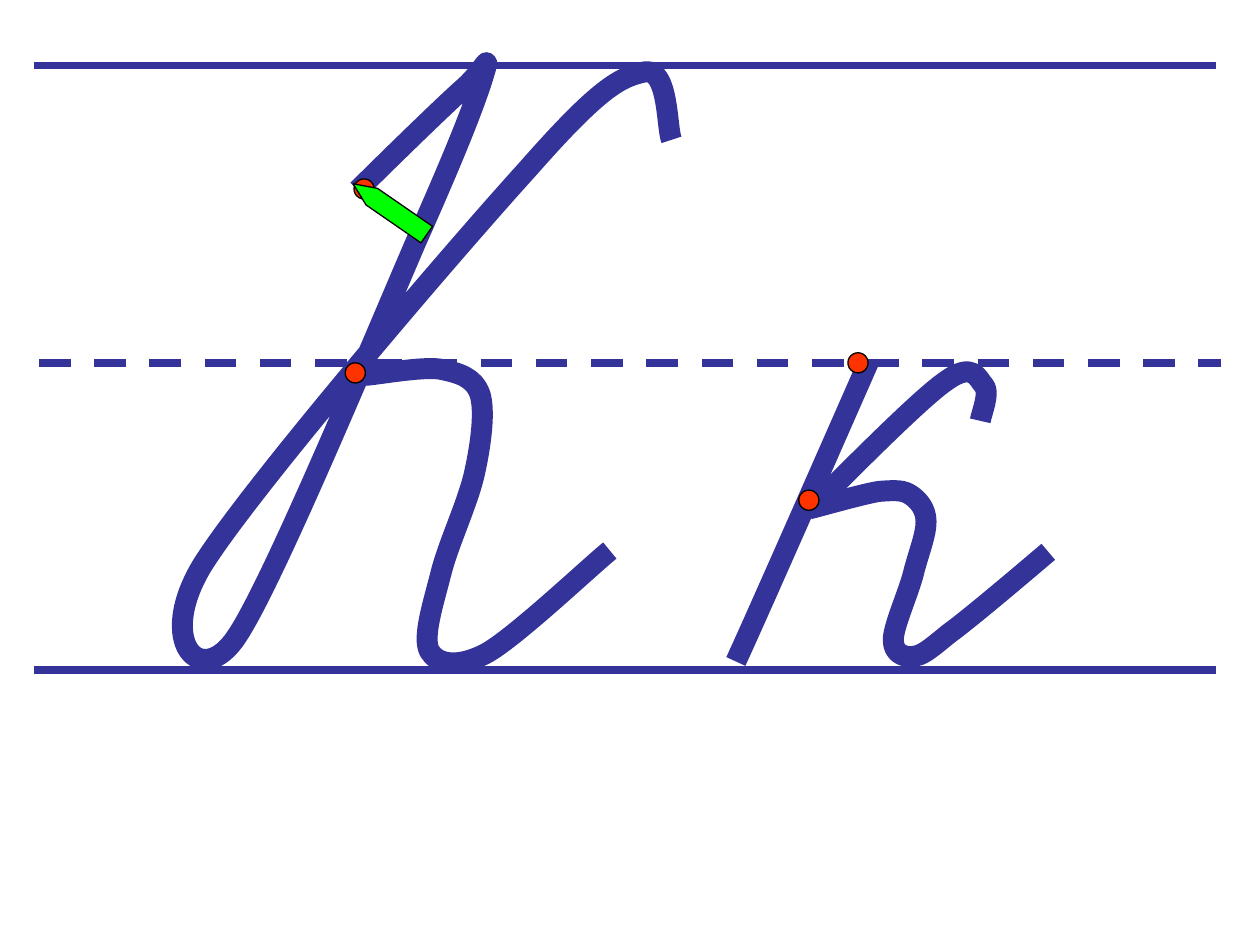
from pptx import Presentation
from pptx.dml.color import RGBColor
from pptx.enum.dml import MSO_LINE
from pptx.enum.shapes import MSO_CONNECTOR, MSO_SHAPE
from pptx.oxml.ns import qn
from pptx.oxml.xmlchemy import OxmlElement
from pptx.util import Pt

PX = 9144
DASH = MSO_LINE.DASH
LINE = MSO_CONNECTOR.STRAIGHT
DOT = MSO_SHAPE.FLOWCHART_CONNECTOR
PEN = MSO_SHAPE.PENTAGON
INK, RED, GREEN, BLACK = "333399", "FF3300", "00FF00", "000000"

SMALL_STEM = [(584, 525), (602, 486), (667, 338), (689, 288)]
BIG_STEM = [
    (533, 111), (529, 102), (531, 54), (512, 57), (493, 61), (477, 68),
    (419, 134), (360, 199), (200, 386), (161, 448), (123, 510), (160, 548),
    (188, 505), (217, 462), (299, 264), (331, 190), (364, 116), (378, 79),
    (384, 59), (390, 39), (385, 55), (368, 70), (351, 85), (301, 134),
    (284, 151),
]
BIG_LEG = [
    (484, 437), (468, 450), (411, 504), (387, 518), (363, 531), (347, 527),
    (341, 517), (335, 506), (344, 479), (350, 455), (356, 431), (372, 398),
    (377, 374), (382, 351), (385, 326), (381, 313), (376, 299), (364, 296),
    (349, 293), (334, 291), (302, 297), (290, 298),
]
SMALL_LEG = [
    (832, 438), (819, 449), (771, 490), (753, 503), (736, 517), (732, 520),
    (725, 521), (718, 522), (709, 519), (709, 508), (709, 497), (721, 471),
    (725, 455), (729, 439), (735, 425), (735, 414), (735, 404), (729, 397),
    (723, 393), (717, 389), (712, 389), (698, 390), (685, 392), (654, 401),
    (642, 404),
]
SMALL_ARM = [
    (642, 405), (660, 388), (727, 319), (750, 303), (773, 286), (776, 301),
    (781, 306), (786, 311), (779, 328), (778, 334),
]


def color(code):
    return RGBColor.from_string(code)


class Board:
    """Draws ruled lines, pen strokes and marks on one slide."""

    def __init__(self, slide):
        self.shapes = slide.shapes

    def edge(self, item, code, width):
        item.line.color.rgb = color(code)
        item.line.width = Pt(width)

    def rule(self, left, top, dash=None):
        ends = (left, top, left + 938, top)
        line = self.shapes.add_connector(LINE, *(n * PX for n in ends))
        self.edge(line, INK, 4.5)
        line.line.dash_style = dash
        line._element.spPr.append(OxmlElement("a:effectLst"))

    def stroke(self, points):
        pen = self.shapes.build_freeform(*points[0], scale=PX)
        pen.add_line_segments(points[1:], close=False)
        shape = pen.convert_to_shape()
        shape.shadow.inherit = False
        shape.fill.background()
        self.edge(shape, INK, 12)
        steps = list(shape._element.iter(qn("a:lnTo")))
        for start in range(0, len(steps), 3):
            curve = OxmlElement("a:cubicBezTo")
            steps[start].addprevious(curve)
            for step in steps[start:start + 3]:
                curve.append(step[0])
                step.getparent().remove(step)

    def mark(self, kind, left, top, width, code):
        box = (left, top, width, 16)
        shape = self.shapes.add_shape(kind, *(n * PX for n in box))
        shape.shadow.inherit = False
        shape.fill.solid()
        shape.fill.fore_color.rgb = color(code)
        self.edge(shape, BLACK, 0.75)
        return shape

    def dot(self, left, top):
        self.mark(DOT, left, top, 16, RED)

    def pencil(self, left, top):
        shape = self.mark(PEN, left, top, 71, GREEN)
        shape.adjustments[0] = 1.124
        shape.rotation = 214.6


def main():
    deck = Presentation()
    deck.slide_width, deck.slide_height = 1000 * PX, 750 * PX
    board = Board(deck.slides.add_slide(deck.slide_layouts[6]))
    board.stroke(SMALL_STEM)
    board.rule(27, 52)
    board.rule(31, 288, DASH)
    board.rule(27, 532)
    for points in (BIG_STEM, BIG_LEG):
        board.stroke(points)
    for left, top in ((274, 288), (281, 142), (673, 280)):
        board.dot(left, top)
    for points in (SMALL_LEG, SMALL_ARM):
        board.stroke(points)
    board.dot(634, 389)
    board.pencil(274, 158)
    deck.save("out.pptx")


if __name__ == "__main__":
    main()
